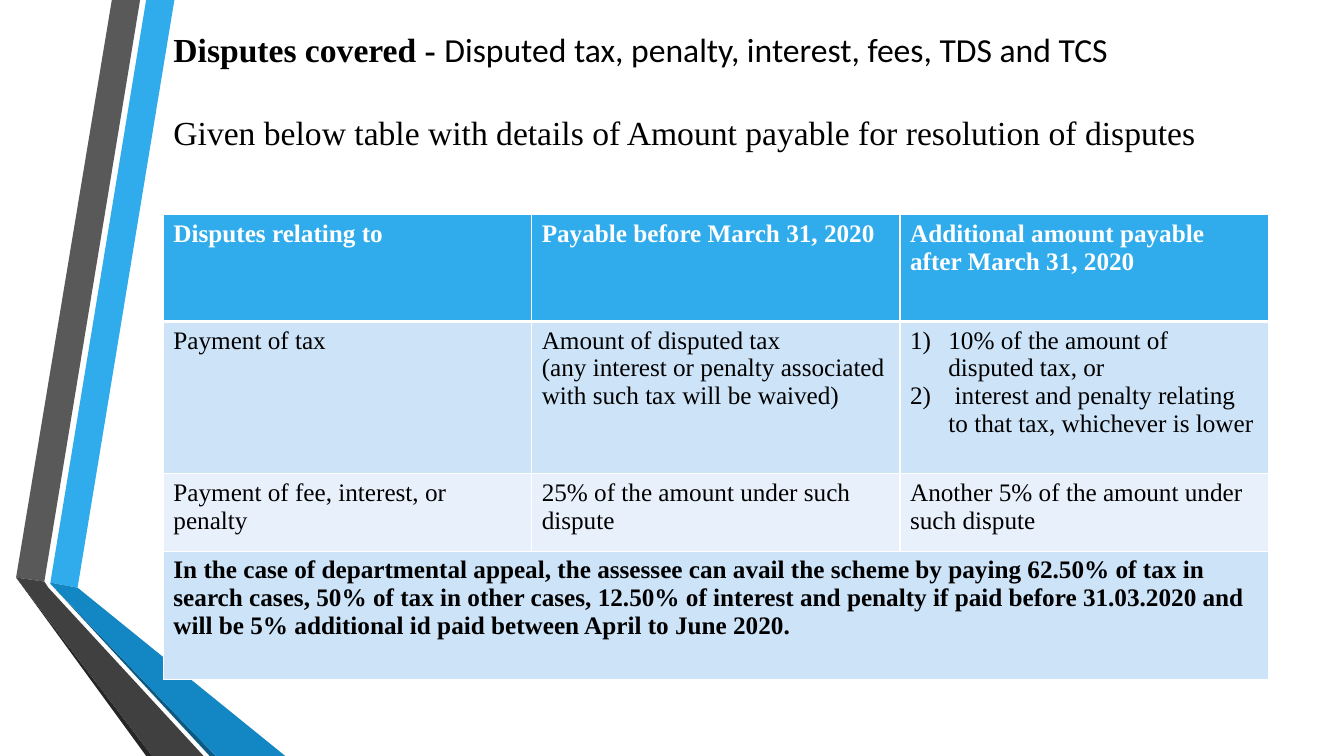
from lxml.etree import SubElement
from pptx import Presentation
from pptx.dml.color import RGBColor
from pptx.enum.text import MSO_ANCHOR, MSO_AUTO_SIZE, PP_ALIGN
from pptx.oxml.ns import qn
from pptx.util import Inches, Pt

COLOURS = {
    "sky": "30ACEC", "grey": "595959", "shadow_grey": "262626",
    "shadow_blue": "0C5A82", "blue": "1287C3", "dark_grey": "404040",
    "white": "FFFFFF", "black": "000000", "band": "CDE3F8", "light_band": "E8F1FB",
}
SERIF = "Times New Roman"
RIBBONS = [
    ("sky", [(0.5, 5.78), (0.77, 5.83), (1.73, 0), (1.45, 0)]),
    ("grey", [(1.39, 0), (1.11, 0), (0.16, 5.73), (0.44, 5.77)]),
    ("shadow_grey", [(0.16, 5.73), (1.45, 7.5), (1.51, 7.5)]),
    ("shadow_blue", [(0.5, 5.79), (2.08, 7.5), (2.14, 7.5)]),
    ("blue", [(0.5, 5.79), (2.14, 7.5), (2.83, 7.5), (0.77, 5.83), (0.5, 5.78)]),
    ("dark_grey", [(2.02, 7.5), (0.48, 5.83), (0.44, 5.77), (0.16, 5.73), (1.51, 7.5)]),
]
TITLE_LINES = [
    [("Disputes covered - ", SERIF, True),
     ("Disputed tax, penalty, interest, fees, TDS and TCS", "Calibri", False)],
    [("Given below table with details of Amount payable for resolution of disputes",
      SERIF, False)],
]
ROWS = [
    (1.06, "sky", "white", True,
     ["Disputes relating to", "Payable before March 31, 2020",
      "Additional amount payable after March 31, 2020"]),
    (1.51, "band", "black", False,
     ["Payment of tax",
      "Amount of disputed tax\n"
      "(any interest or penalty associated with such tax will be waived)",
      "10% of the amount of disputed tax, or\n"
      " interest and penalty relating to that tax, whichever is lower"]),
    (0.77, "light_band", "black", False,
     ["Payment of fee, interest, or penalty",
      "25% of the amount under such dispute",
      "Another 5% of the amount under such dispute"]),
    (1.27, "band", "black", True,
     ["In the case of departmental appeal, the assessee can avail the scheme by paying "
      "62.50% of tax in search cases, 50% of tax in other cases, 12.50% of interest and "
      "penalty if paid before 31.03.2020 and will be 5% additional id paid between "
      "April to June 2020."]),
]
NUMBERED_CELL = (1, 2)


def colour(name):
    """Return the named colour."""
    return RGBColor.from_string(COLOURS[name])


def add_ribbon(slide, fill, points):
    """Draw one filled polygon of the side ribbon."""
    corners = [(Inches(x), Inches(y)) for x, y in points]
    builder = slide.shapes.build_freeform(*corners[0])
    builder.add_line_segments(corners[1:], close=True)
    shape = builder.convert_to_shape()
    shape.shadow.inherit = False
    shape.fill.solid()
    shape.fill.fore_color.rgb = colour(fill)
    shape.line.fill.background()


def fill_title(slide):
    """Place and write the two-line title in front of the ribbon."""
    title = slide.shapes.title
    slide.shapes._spTree.append(title._element)
    title.left, title.top = Inches(1.62), Inches(0)
    title.width, title.height = Inches(10.96), Inches(1.76)
    frame = title.text_frame
    frame.auto_size = MSO_AUTO_SIZE.NONE
    frame.vertical_anchor = MSO_ANCHOR.TOP
    frame.margin_top = Inches(0.29)
    for index, pieces in enumerate(TITLE_LINES):
        paragraph = frame.add_paragraph() if index else frame.paragraphs[0]
        paragraph.alignment = PP_ALIGN.LEFT
        paragraph.line_spacing = 1.0
        paragraph.space_before = Pt(30 if index else 0)
        paragraph.font.size = Pt(24)
        paragraph.font.color.rgb = colour("black")
        for text, font, bold in pieces:
            run = paragraph.add_run()
            run.text = text
            run.font.name = font
            run.font.bold = bold


def set_borders(cell, widths):
    """Give a cell white borders, with widths in points by side."""
    properties = cell._tc.get_or_add_tcPr()
    for side, width in widths.items():
        line = SubElement(properties, qn(f"a:ln{side}"), w=str(Pt(width)))
        solid = SubElement(line, qn("a:solidFill"))
        SubElement(solid, qn("a:srgbClr"), val=COLOURS["white"])


def number_paragraph(paragraph):
    """Turn a paragraph into a numbered item with a hanging indent."""
    properties = paragraph._p.get_or_add_pPr()
    properties.set("marL", str(Inches(0.38)))
    properties.set("indent", str(Inches(-0.38)))
    numbering = properties.makeelement(qn("a:buAutoNum"), {"type": "arabicParenR"})
    properties.insert(0, numbering)


def fill_cell(cell, text, fill, font_colour, bold):
    """Write and colour one table cell."""
    cell.text = text
    cell.fill.solid()
    cell.fill.fore_color.rgb = colour(fill)
    for paragraph in cell.text_frame.paragraphs:
        paragraph.font.name = SERIF
        paragraph.font.size = Pt(18)
        paragraph.font.bold = bold
        paragraph.font.color.rgb = colour(font_colour)


def add_payment_table(slide):
    """Add the table of amounts payable."""
    height = sum(row[0] for row in ROWS)
    table = slide.shapes.add_table(
        len(ROWS), 3, Inches(1.62), Inches(2.13), Inches(10.96), Inches(height)).table
    for index, (row_height, fill, font_colour, bold, texts) in enumerate(ROWS):
        table.rows[index].height = Inches(row_height)
        widths = {"L": 1, "R": 1, "T": 3 if index == 1 else 1, "B": 1 if index else 3}
        for cell in table.rows[index].cells:
            set_borders(cell, widths)
        for column, text in enumerate(texts):
            fill_cell(table.cell(index, column), text, fill, font_colour, bold)
    table.cell(3, 0).merge(table.cell(3, 2))
    for paragraph in table.cell(*NUMBERED_CELL).text_frame.paragraphs:
        number_paragraph(paragraph)


def main():
    """Build the slide and save it."""
    presentation = Presentation()
    presentation.slide_width, presentation.slide_height = Inches(13.33), Inches(7.5)
    slide = presentation.slides.add_slide(presentation.slide_layouts[5])
    for fill, points in RIBBONS:
        add_ribbon(slide, fill, points)
    fill_title(slide)
    add_payment_table(slide)
    presentation.save("out.pptx")


if __name__ == "__main__":
    main()
